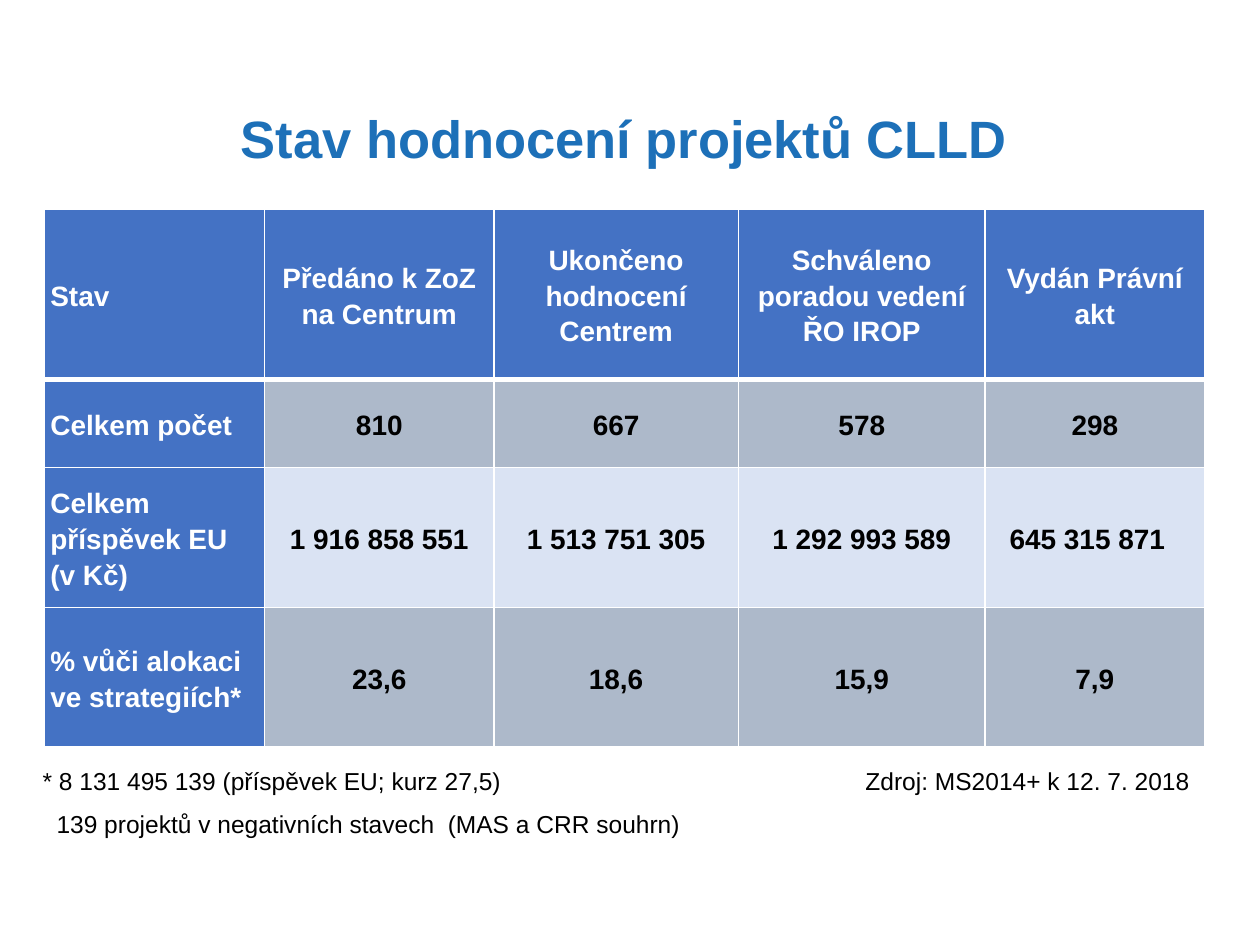
from lxml import etree
from pptx import Presentation
from pptx.dml.color import RGBColor
from pptx.enum.text import MSO_ANCHOR, PP_ALIGN
from pptx.oxml.ns import qn
from pptx.util import Inches, Pt

LEFT, CENTER = PP_ALIGN.LEFT, PP_ALIGN.CENTER
MIDDLE = MSO_ANCHOR.MIDDLE
FONT = "Arial"
COLORS = {
    "title": "1D70B8",
    "header": "4472C4",
    "odd": "ADB9CA",
    "even": "DAE3F3",
    "white": "FFFFFF",
    "black": "000000",
}

TITLE = "Stav hodnocení projektů CLLD"
ROWS = [
    ["Stav", "Předáno k ZoZ na Centrum", "Ukončeno hodnocení Centrem",
     "Schváleno poradou vedení ŘO IROP", "Vydán Právní akt"],
    ["Celkem počet", "810", "667", "578", "298"],
    ["Celkem příspěvek EU (v Kč)", "1 916 858 551", "1 513 751 305",
     "1 292 993 589", "645 315 871"],
    ["% vůči alokaci ve strategiích*", "23,6", "18,6", "15,9", "7,9"],
]
COLUMN_WIDTHS = [1.75, 1.82, 1.94, 1.96, 1.74]
ROW_HEIGHTS = [1.35, 0.7, 1.11, 1.11]
TABLE_LEFT, TABLE_TOP = 0.35, 1.66
CELL_MARGIN = 0.05
SHIFTED_CELL, SHIFTED_MARGIN = (2, 4), 0.17
NOTES = [
    ("* 8 131 495 139 (příspěvek EU; kurz 27,5)", 0.24, 6.03, 3.86, False),
    ("Zdroj: MS2014+ k 12. 7. 2018", 6.77, 6.03, 2.78, False),
    ("139 projektů v negativních stavech  (MAS a CRR souhrn)", 0.35, 6.37, 5.48, True),
]


def format_text(paragraph, size, color, bold, alignment):
    paragraph.alignment = alignment
    for run in paragraph.runs:
        run.font.name = FONT
        run.font.size = Pt(size)
        run.font.bold = bold
        run.font.color.rgb = RGBColor.from_string(COLORS[color])


def add_text(slide, text, left, top, width, height, size, color,
             bold=False, alignment=LEFT, wrap=True):
    box = slide.shapes.add_textbox(Inches(left), Inches(top), Inches(width), Inches(height))
    box.text_frame.word_wrap = wrap
    box.text_frame.text = text
    format_text(box.text_frame.paragraphs[0], size, color, bold, alignment)


def set_borders(cell, widths):
    properties = cell._tc.get_or_add_tcPr()
    for position, (side, width) in enumerate(widths.items()):
        line = etree.Element(qn(f"a:ln{side}"), w=str(Pt(width)))
        fill = etree.SubElement(line, qn("a:solidFill"))
        etree.SubElement(fill, qn("a:srgbClr"), val=COLORS["white"])
        properties.insert(position, line)


def style_cell(cell, row, column):
    is_header = row == 0 or column == 0
    fill = "header" if is_header else "odd" if row % 2 else "even"
    cell.fill.solid()
    cell.fill.fore_color.rgb = RGBColor.from_string(COLORS[fill])
    cell.vertical_anchor = MIDDLE
    cell.margin_left = Inches(CELL_MARGIN)
    cell.margin_right = Inches(SHIFTED_MARGIN if (row, column) == SHIFTED_CELL else CELL_MARGIN)
    cell.margin_top = cell.margin_bottom = 0
    paragraph = cell.text_frame.paragraphs[0]
    paragraph.line_spacing = 1.15
    format_text(paragraph, 16, "white" if is_header else "black", True,
                CENTER if column else LEFT)
    set_borders(cell, {"L": 1, "R": 1, "T": 3 if row == 1 else 1, "B": 3 if row == 0 else 1})


def add_status_table(slide):
    table = slide.shapes.add_table(
        len(ROWS), len(COLUMN_WIDTHS), Inches(TABLE_LEFT), Inches(TABLE_TOP),
        Inches(sum(COLUMN_WIDTHS)), Inches(sum(ROW_HEIGHTS))).table
    table.first_col = True
    for column, width in zip(table.columns, COLUMN_WIDTHS):
        column.width = Inches(width)
    for row, height in zip(table.rows, ROW_HEIGHTS):
        row.height = Inches(height)
    for row, texts in enumerate(ROWS):
        for column, text in enumerate(texts):
            cell = table.cell(row, column)
            cell.text_frame.text = text
            style_cell(cell, row, column)


def main():
    presentation = Presentation()
    presentation.slide_width, presentation.slide_height = Inches(10), Inches(7.5)
    slide = presentation.slides.add_slide(presentation.slide_layouts[6])
    add_text(slide, TITLE, 0.66, 0.79, 8.59, 0.61, 30, "title", True, CENTER)
    add_status_table(slide)
    for text, left, top, width, wrap in NOTES:
        add_text(slide, text, left, top, width, 0.34, 14, "black", wrap=wrap)
    presentation.save("out.pptx")


if __name__ == "__main__":
    main()
